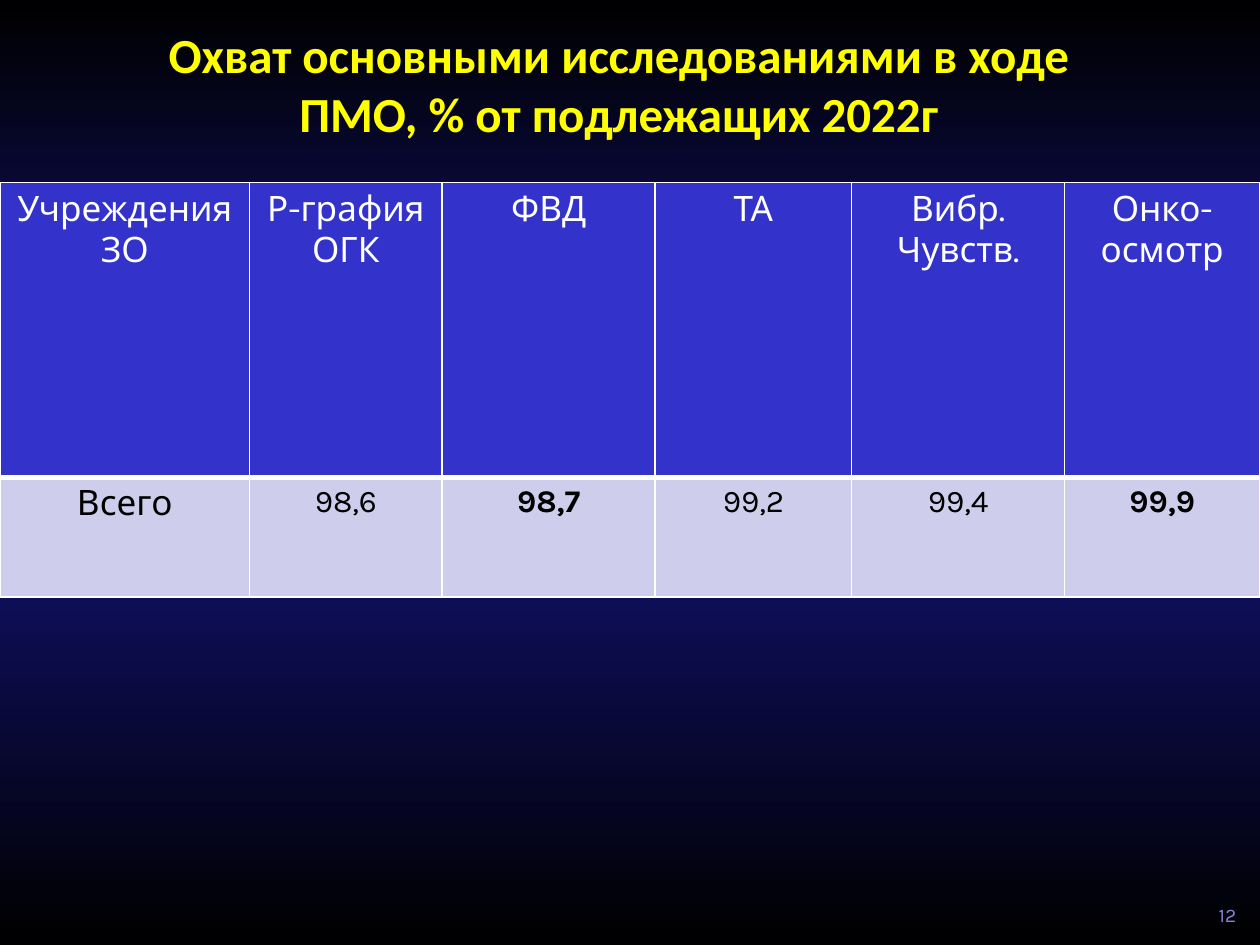
from copy import deepcopy

from lxml import etree
from pptx import Presentation
from pptx import util as u
from pptx.dml.color import RGBColor
from pptx.enum import text
from pptx.oxml import ns

BLACK = RGBColor(0x00, 0x00, 0x00)
NAVY = RGBColor(0x14, 0x14, 0x7E)
WHITE = RGBColor(0xFF, 0xFF, 0xFF)
YELLOW = RGBColor(0xFF, 0xFF, 0x00)
HEADER_BLUE = RGBColor(0x33, 0x33, 0xCC)
PALE_BLUE = RGBColor(0xCE, 0xCE, 0xEC)
LILAC = RGBColor(0x85, 0x85, 0xE0)

TITLE = "Охват основными исследованиями в ходе ПМО, % от подлежащих 2022г"
COLUMNS = [
    (1.98, ["Учреждения ЗО"], "Всего", 20, False),
    (1.53, ["Р-графия ОГК"], "98,6", 18, False),
    (1.69, ["ФВД"], "98,7", 18, True),
    (1.56, ["ТА"], "99,2", 18, False),
    (1.69, ["Вибр.", "Чувств."], "99,4", 18, False),
    (1.55, ["Онко-", "осмотр"], "99,9", 18, True),
]
ROW_HEIGHTS = [2.34, 0.95]


class SlideBuilder:
    font = "Karla"
    title_font = "Calibri"

    def __init__(self, slide):
        self.slide = slide

    def background(self, stops, angle):
        fill = self.slide.background.fill
        fill.gradient()
        stop_list = self.slide.element.xpath(".//a:gsLst")[0]
        while len(stop_list) < len(stops):
            stop_list.append(deepcopy(stop_list[0]))
        for stop, (position, color) in zip(fill.gradient_stops, stops):
            stop.position = position
            stop.color.rgb = color
        fill.gradient_angle = angle

    def add_lines(self, frame, lines, size, color, bold=False, font=None,
                  align=text.PP_ALIGN.CENTER):
        for index, line in enumerate(lines):
            para = frame.add_paragraph() if index else frame.paragraphs[0]
            para.alignment = align
            span = para.add_run()
            span.text = line
            span.font.name = font or self.font
            span.font.size = u.Pt(size)
            span.font.bold = bold
            span.font.color.rgb = color

    def text_box(self, left, top, width, height, anchor):
        box = self.slide.shapes.add_textbox(
            u.Inches(left), u.Inches(top), u.Inches(width), u.Inches(height))
        frame = box.text_frame
        frame.word_wrap = True
        frame.vertical_anchor = anchor
        return frame

    def title(self, words):
        frame = self.text_box(1.06, 0.4, 7.7, 0.53, text.MSO_ANCHOR.MIDDLE)
        frame.margin_left = frame.margin_right = 0
        frame.margin_top = frame.margin_bottom = 0
        self.add_lines(frame, [words], 28, YELLOW, True, self.title_font)

    def page_number(self, number):
        frame = self.text_box(6.91, 7, 3, 0.4, text.MSO_ANCHOR.BOTTOM)
        self.add_lines(frame, [number], 11, LILAC, align=text.PP_ALIGN.RIGHT)

    def borders(self, cell, top, bottom):
        properties = cell._tc.get_or_add_tcPr()
        sides = {"lnL": 1, "lnR": 1, "lnT": top, "lnB": bottom}
        for index, (side, points) in enumerate(sides.items()):
            line = etree.Element(ns.qn(f"a:{side}"), w=str(u.Pt(points)))
            fill = etree.SubElement(line, ns.qn("a:solidFill"))
            etree.SubElement(fill, ns.qn("a:srgbClr"), val=str(WHITE))
            properties.insert(index, line)

    def cell(self, cell, lines, size, color, fill, bold=False, top=1, bottom=1):
        cell.fill.solid()
        cell.fill.fore_color.rgb = fill
        self.add_lines(cell.text_frame, lines, size, color, bold)
        self.borders(cell, top, bottom)

    def table(self, columns, row_heights):
        table = self.slide.shapes.add_table(
            len(row_heights), len(columns), u.Inches(0), u.Inches(1.45),
            u.Inches(10), u.Inches(sum(row_heights))).table
        for row, height in zip(table.rows, row_heights):
            row.height = u.Inches(height)
        for index, (width, heading, value, size, bold) in enumerate(columns):
            table.columns[index].width = u.Inches(width)
            self.cell(table.cell(0, index), heading, 20, WHITE, HEADER_BLUE,
                      bottom=3)
            self.cell(table.cell(1, index), [value], size, BLACK, PALE_BLUE,
                      bold, top=3)


def main():
    deck = Presentation()
    deck.slide_width = u.Inches(10)
    deck.slide_height = u.Inches(7.5)
    page = SlideBuilder(deck.slides.add_slide(deck.slide_layouts[6]))
    page.background([(0, BLACK), (0.53, NAVY), (1, BLACK)], 90)
    page.title(TITLE)
    page.table(COLUMNS, ROW_HEIGHTS)
    page.page_number("12")
    deck.save("out.pptx")


if __name__ == "__main__":
    main()
